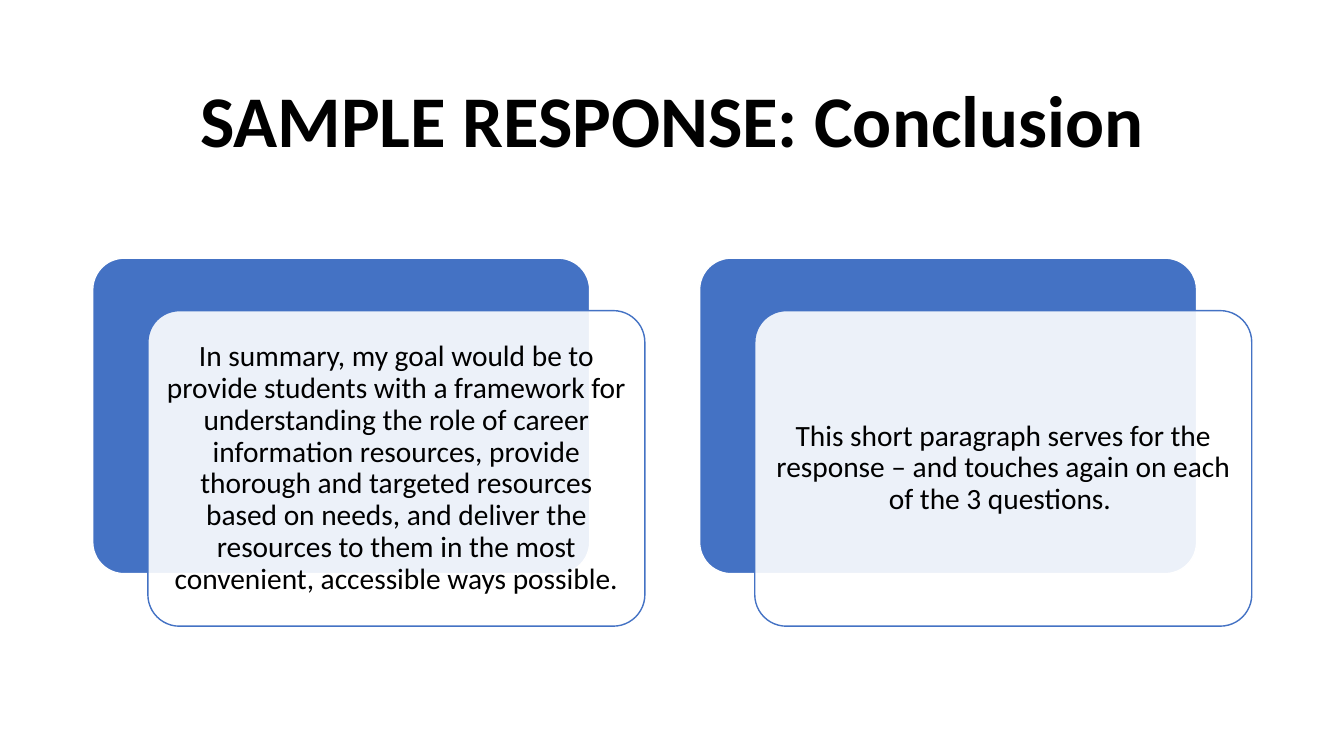
from pptx import Presentation
from pptx.dml.color import RGBColor
from pptx.enum.shapes import MSO_SHAPE
from pptx.enum.text import MSO_ANCHOR, PP_ALIGN
from pptx.oxml.ns import qn
from pptx.util import Pt
from lxml.etree import SubElement

TITLE = "SAMPLE RESPONSE: Conclusion"
CARDS = [
    "In summary, my goal would be to provide students with a framework for "
    "understanding the role of career information resources, provide thorough "
    "and targeted resources based on needs, and deliver the resources to them "
    "in the most convenient, accessible ways possible.",
    "This short paragraph serves for the response – and touches again on each "
    "of the 3 questions. ",
]

FONT = "Calibri"
BLACK = RGBColor(0x00, 0x00, 0x00)
WHITE = RGBColor(0xFF, 0xFF, 0xFF)
BLUE = RGBColor(0x44, 0x72, 0xC4)

LEFT, TOP = 66.24, 184.4
CARD_W, CARD_H = 355, 225.4
PITCH = 433.5
SHIFT_X, SHIFT_Y = 39.4, 37.5
INSET = 6.6


def format_text(tf, text, size, bold=False):
    tf.word_wrap = True
    tf.vertical_anchor = MSO_ANCHOR.MIDDLE
    p = tf.paragraphs[0]
    p.text = text
    p.alignment = PP_ALIGN.CENTER
    p.line_spacing = 0.9
    p.font.name = FONT
    p.font.size = Pt(size)
    p.font.bold = bold
    p.font.color.rgb = BLACK


def add_card(s, x, y, fill, line):
    sp = s.shapes.add_shape(MSO_SHAPE.ROUNDED_RECTANGLE,
                            Pt(x), Pt(y), Pt(CARD_W), Pt(CARD_H))
    sp.adjustments[0] = 0.1
    sp.shadow.inherit = False
    sp.fill.solid()
    sp.fill.fore_color.rgb = fill
    sp.line.color.rgb = line
    sp.line.width = Pt(1)
    return sp


def set_opacity(sp, percent):
    color = sp.fill._xPr.find(qn("a:solidFill"))[0]
    SubElement(color, qn("a:alpha"), val=str(percent * 1000))


prs = Presentation()
prs.slide_width, prs.slide_height = Pt(960), Pt(540)
s = prs.slides.add_slide(prs.slide_layouts[5])

title = s.shapes.title
title.left, title.top, title.width, title.height = Pt(66), Pt(44), Pt(828), Pt(89)
format_text(title.text_frame, TITLE, 52, bold=True)

for i, text in enumerate(CARDS):
    x = LEFT + i * PITCH
    add_card(s, x, TOP, BLUE, WHITE)
    front = add_card(s, x + SHIFT_X, TOP + SHIFT_Y, WHITE, BLUE)
    set_opacity(front, 90)
    tf = front.text_frame
    tf.margin_left = tf.margin_right = tf.margin_top = tf.margin_bottom = Pt(INSET)
    format_text(tf, text, 21)

prs.save("out.pptx")
